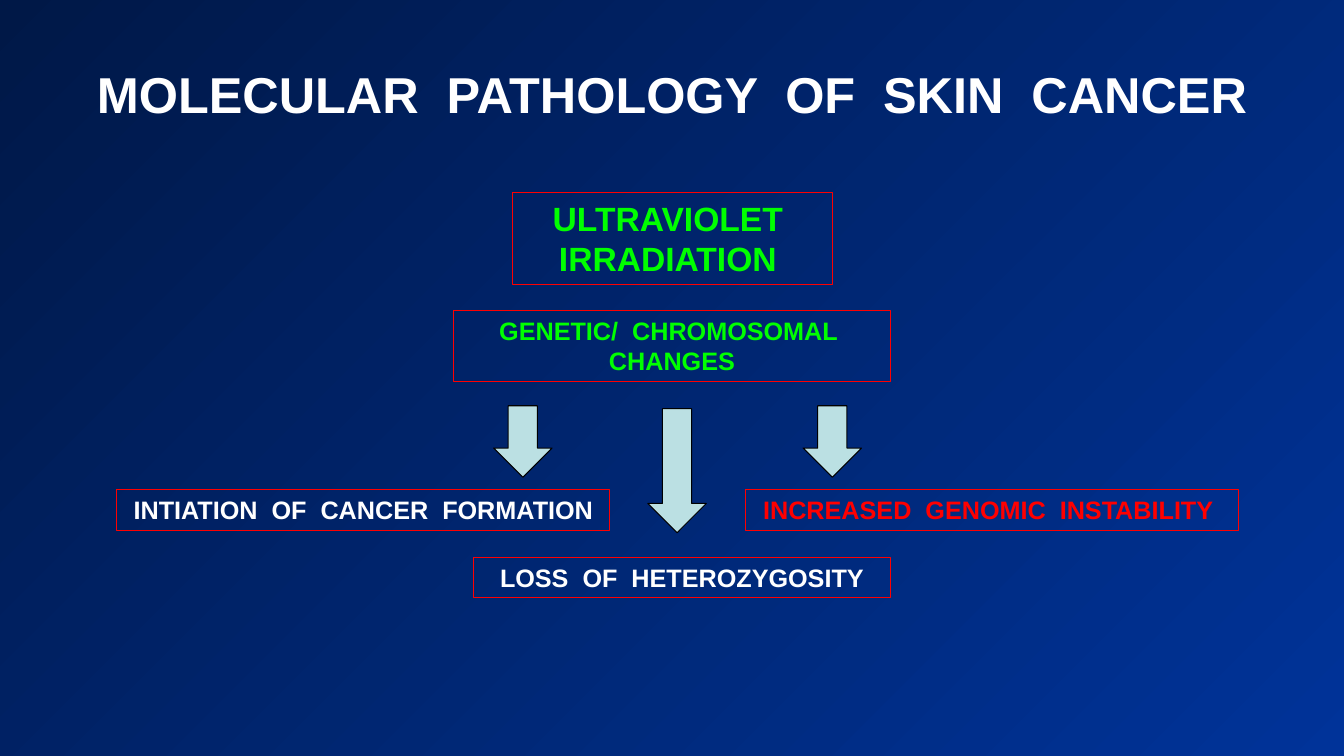
from pptx import Presentation
from pptx.dml.color import RGBColor
from pptx.enum.shapes import MSO_SHAPE as Shape
from pptx.enum.text import MSO_ANCHOR as Anchor, MSO_AUTO_SIZE as AutoSize, PP_ALIGN as Align
from pptx.util import Inches, Pt

WHITE, GREEN, RED = "FFFFFF", "00FF00", "FF0000"


def color(value):
    return RGBColor.from_string(value)


class Diagram:
    font = "Arial"
    border, arrow_fill, arrow_line = RED, "BBE0E3", "000000"
    line_width = 0.75

    def __init__(self, slide):
        self.slide = slide

    def background(self, start, end):
        fill = self.slide.background.fill
        fill.gradient()
        fill.gradient_angle = 315  # towards the bottom right
        for stop, value in zip(fill.gradient_stops, (start, end)):
            stop.color.rgb = color(value)

    def label(self, frame, text, size, text_color):
        frame.word_wrap = True
        paragraph = frame.paragraphs[0]
        paragraph.text = text
        paragraph.alignment = Align.CENTER
        font = paragraph.font
        font.name, font.size, font.bold = self.font, Pt(size), True
        font.color.rgb = color(text_color)

    def title(self, text, *place):
        frame = self.slide.shapes.add_textbox(*map(Inches, place)).text_frame
        frame.vertical_anchor = Anchor.MIDDLE
        self.label(frame, text, 36, WHITE)

    def shape(self, kind, place, line_color):
        item = self.slide.shapes.add_shape(kind, *map(Inches, place))
        item.shadow.inherit = False
        item.line.color.rgb = color(line_color)
        item.line.width = Pt(self.line_width)
        return item

    def box(self, text, place, text_color, size=18):
        item = self.shape(Shape.RECTANGLE, place, self.border)
        item.fill.background()
        frame = item.text_frame
        frame.vertical_anchor = Anchor.TOP
        frame.auto_size = AutoSize.SHAPE_TO_FIT_TEXT
        self.label(frame, text, size, text_color)

    def down_arrow(self, left, top, length, thickness=0.58):
        item = self.shape(Shape.RIGHT_ARROW, (left, top, length, thickness), self.arrow_line)
        item.rotation = 90
        item.fill.solid()
        item.fill.fore_color.rgb = color(self.arrow_fill)


def main():
    deck = Presentation()
    deck.slide_width, deck.slide_height = Inches(13.33), Inches(7.5)
    diagram = Diagram(deck.slides.add_slide(deck.slide_layouts[6]))

    # Background and title
    diagram.background("001847", "003399")
    diagram.title("MOLECULAR  PATHOLOGY  OF  SKIN  CANCER", 0.67, 0.3, 12, 1.25)

    # Cause and change
    diagram.box("ULTRAVIOLET  IRRADIATION ", (5.08, 1.91, 3.18, 0.91), GREEN, 24)
    diagram.box("GENETIC/  CHROMOSOMAL  CHANGES", (4.5, 3.08, 4.33, 0.71), GREEN)

    # Outcomes
    outcomes = [
        ("INTIATION  OF  CANCER  FORMATION", 1.16, 4.86, 4.89, WHITE),
        ("INCREASED  GENOMIC  INSTABILITY ", 7.39, 4.86, 4.89, RED),
        ("LOSS  OF  HETEROZYGOSITY", 4.7, 5.53, 4.13, WHITE),
    ]
    for text, left, top, width, text_color in outcomes:
        diagram.box(text, (left, top, width, 0.4), text_color)

    # Arrows to the outcomes
    for left, top, length in [(6.1, 4.38, 1.23), (4.83, 4.09, 0.71), (7.9, 4.09, 0.71)]:
        diagram.down_arrow(left, top, length)

    deck.save("out.pptx")


if __name__ == "__main__":
    main()
